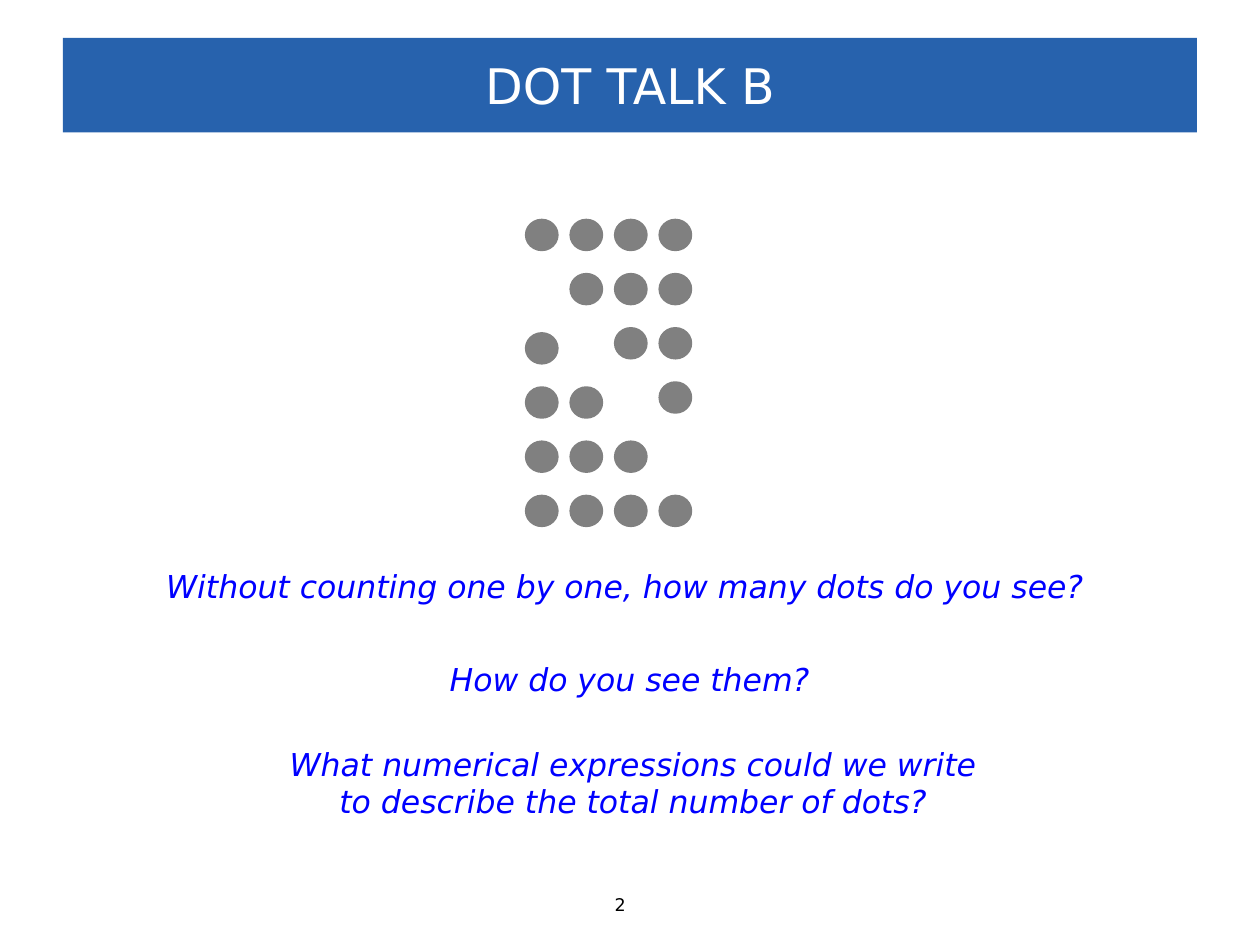
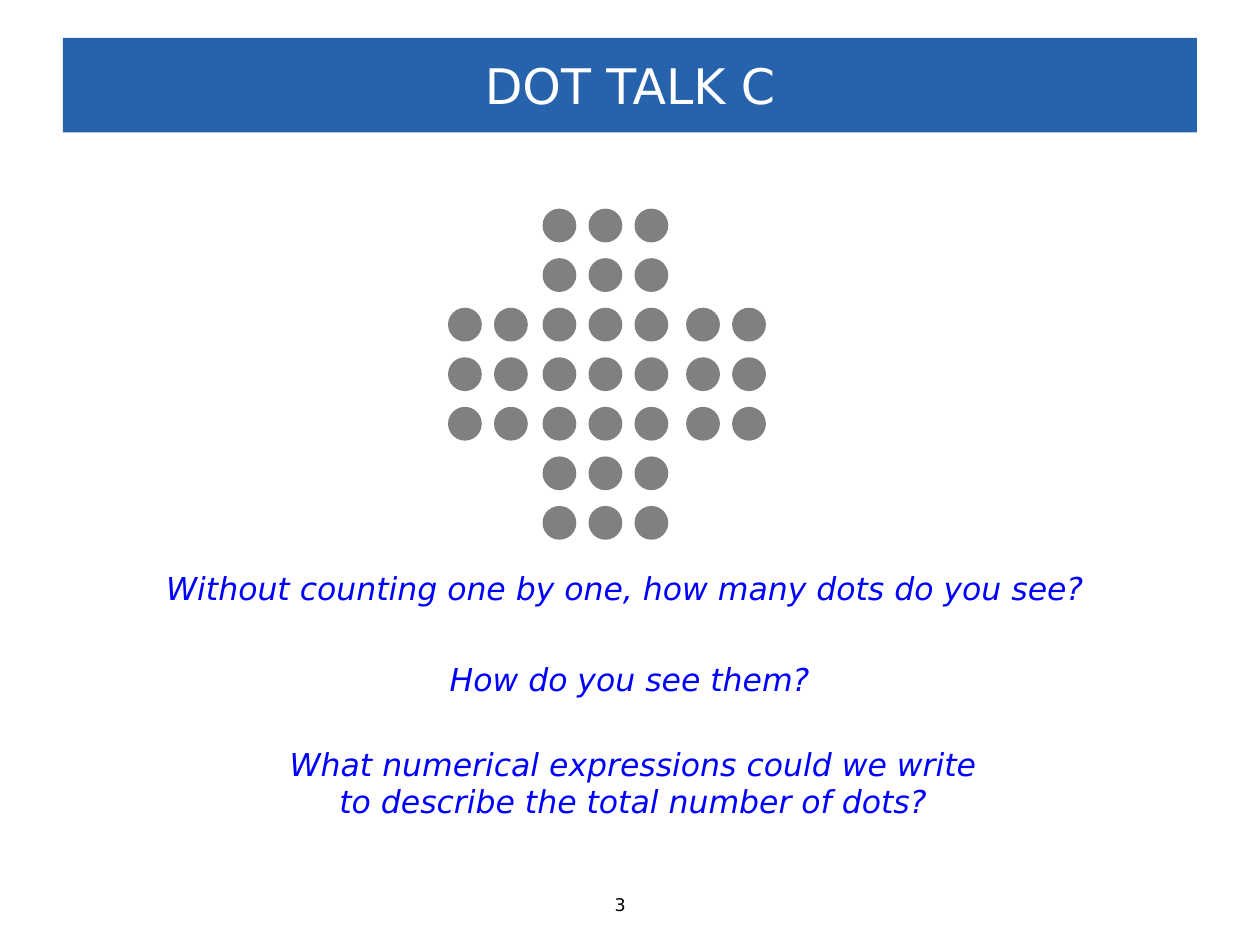
"""Build the dot talk slides, each asking how an arrangement of dots is seen."""
from typing import NamedTuple

from pptx import Presentation
from pptx.dml.color import RGBColor
from pptx.enum.shapes import MSO_SHAPE
from pptx.enum.text import MSO_ANCHOR, MSO_AUTO_SIZE, PP_ALIGN
from pptx.slide import Slide
from pptx.text.text import TextFrame
from pptx.util import Inches, Pt

RECTANGLE, OVAL = MSO_SHAPE.RECTANGLE, MSO_SHAPE.OVAL
MIDDLE = MSO_ANCHOR.MIDDLE
FIT_TEXT = MSO_AUTO_SIZE.SHAPE_TO_FIT_TEXT
LEFT, CENTER = PP_ALIGN.LEFT, PP_ALIGN.CENTER

WHITE = RGBColor(0xFF, 0xFF, 0xFF)
BLACK = RGBColor(0x00, 0x00, 0x00)
BAND_BLUE = RGBColor(0x27, 0x62, 0xAD)
QUESTION_BLUE = RGBColor(0x00, 0x00, 0xFF)
DOT_GRAY = RGBColor(0x80, 0x80, 0x80)
FONT = "DejaVu Sans"
DOT = "●"


class Caption(NamedTuple):
    """A text box with its place in inches and its style."""
    text: str
    left: float
    top: float
    width: float
    height: float
    size: int = 18
    color: RGBColor = QUESTION_BLUE
    italic: bool = True
    wrap: bool = False


class DotBlock(NamedTuple):
    """Rows of dots, starting at a corner given in inches."""
    left: float
    top: float
    rows: tuple[str, ...]


class DotTalk(NamedTuple):
    """One slide: its title, number, dot measures and dot blocks."""
    title: str
    number: int
    first_question_top: float
    dot_height: float
    column_pitch: float
    row_pitch: float
    blocks: tuple[DotBlock, ...]


DOT_WIDTH = 0.24
CROSS_TOP, CROSS_BOTTOM = 1.67, 4.03
CROSS_PITCH = (CROSS_BOTTOM - CROSS_TOP) / 6
ARMS_TOP = CROSS_TOP + 2 * CROSS_PITCH
ARM_ROWS = (DOT * 2,) * 3

TALKS = (
    DotTalk("DOT TALK B", 2, 4.45, 0.23, (5.24 - 4.18) / 3, 0.43, (
        DotBlock(4.18, 1.75, tuple((DOT * count).rjust(4) for count in (4, 3, 2, 1))),
        DotBlock(4.18, 2.65, tuple(DOT * count for count in (1, 2, 3, 4))),
    )),
    DotTalk("DOT TALK C", 3, 4.47, 0.24, (5.05 - 4.32) / 2, CROSS_PITCH, (
        DotBlock(4.32, CROSS_TOP, (DOT * 3,) * 7),
        DotBlock(3.57, ARMS_TOP, ARM_ROWS),
        DotBlock(5.46, ARMS_TOP, ARM_ROWS),
    )),
)


def write(frame: TextFrame, text: str, size: int, color: RGBColor,
          align: PP_ALIGN, italic: bool = False) -> None:
    """Fill a text frame with one styled paragraph."""
    paragraph = frame.paragraphs[0]
    paragraph.text = text
    paragraph.alignment = align
    paragraph.font.name = FONT
    paragraph.font.size = Pt(size)
    paragraph.font.color.rgb = color
    paragraph.font.italic = italic


def add_title_band(slide: Slide, title: str) -> None:
    """Draw the blue band that carries the title."""
    band = slide.shapes.add_shape(RECTANGLE, Inches(0.5), Inches(0.3), Inches(9), Inches(0.75))
    band.shadow.inherit = False
    band.fill.solid()
    band.fill.fore_color.rgb = BAND_BLUE
    band.line.fill.background()
    band.text_frame.vertical_anchor = MIDDLE
    write(band.text_frame, title, 28, WHITE, CENTER)


def add_caption(slide: Slide, caption: Caption) -> None:
    """Draw a text box; only wrapped text is centred."""
    box = slide.shapes.add_textbox(Inches(caption.left), Inches(caption.top),
                                   Inches(caption.width), Inches(caption.height))
    frame = box.text_frame
    frame.word_wrap = caption.wrap
    frame.auto_size = FIT_TEXT
    write(frame, caption.text, caption.size, caption.color,
          CENTER if caption.wrap else LEFT, caption.italic)


def add_dot_block(slide: Slide, talk: DotTalk, block: DotBlock) -> None:
    """Draw one block of dots as a group."""
    group = slide.shapes.add_group_shape()
    for row, marks in enumerate(block.rows):
        for column, mark in enumerate(marks):
            if mark != DOT:
                continue
            dot = group.shapes.add_shape(
                OVAL,
                Inches(block.left + column * talk.column_pitch),
                Inches(block.top + row * talk.row_pitch),
                Inches(DOT_WIDTH), Inches(talk.dot_height))
            dot.shadow.inherit = False
            dot.fill.solid()
            dot.fill.fore_color.rgb = DOT_GRAY
            dot.line.color.rgb = DOT_GRAY
            dot.line.width = Pt(2)


def add_talk(slide: Slide, talk: DotTalk) -> None:
    """Draw the whole slide of one dot talk."""
    captions = (
        Caption(str(talk.number), 4.78, 7.05, 0.44, 0.27, 10, BLACK, italic=False),
        Caption("Without counting one by one, how many dots do you see?",
                1.22, talk.first_question_top, 7.61, 0.4),
        Caption("How do you see them?", 3.47, 5.19, 3.11, 0.4),
        Caption("What numerical expressions could we write to describe the total number of dots?",
                2.08, 5.86, 5.89, 0.71, wrap=True),
    )
    add_title_band(slide, talk.title)
    for caption in captions:
        add_caption(slide, caption)
    for block in talk.blocks:
        add_dot_block(slide, talk, block)


def main() -> None:
    """Build and save the presentation."""
    presentation = Presentation()
    presentation.slide_width = Inches(10)
    presentation.slide_height = Inches(7.5)
    blank = presentation.slide_layouts[6]
    for talk in TALKS:
        add_talk(presentation.slides.add_slide(blank), talk)
    presentation.save("out.pptx")


if __name__ == "__main__":
    main()
